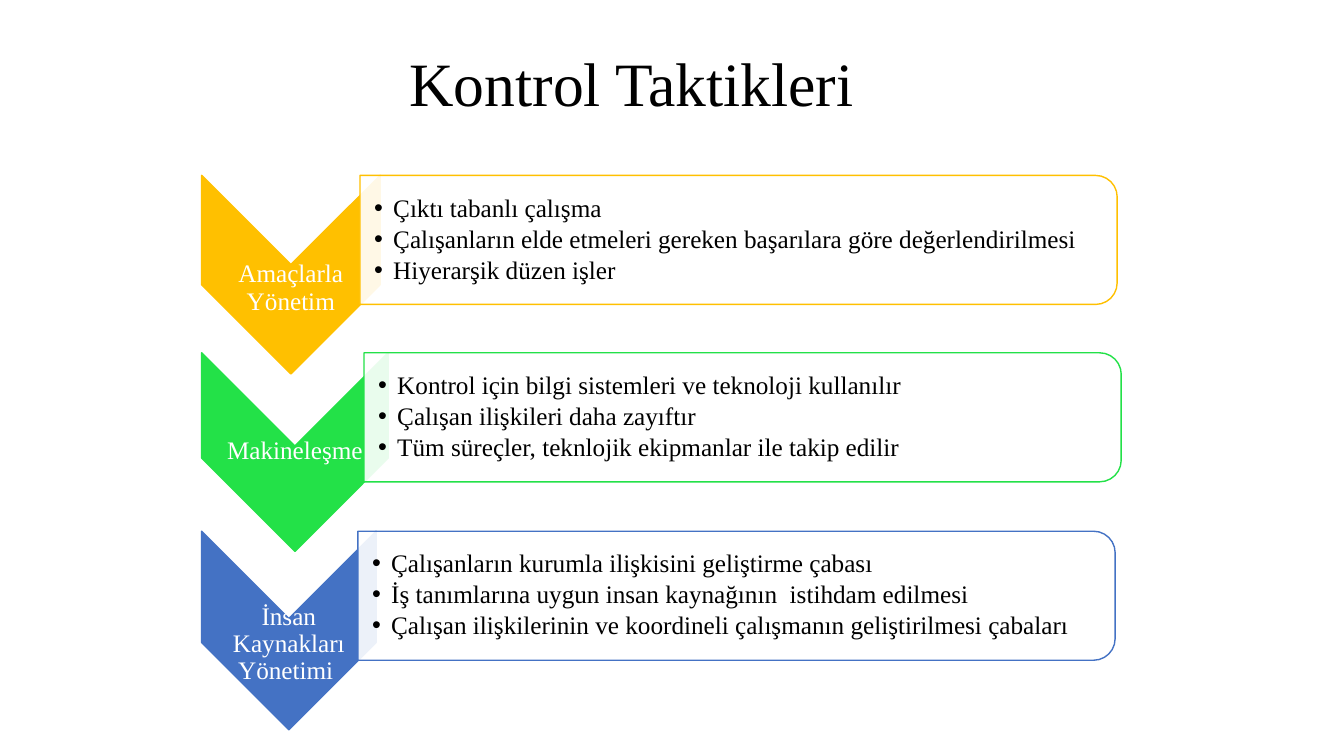
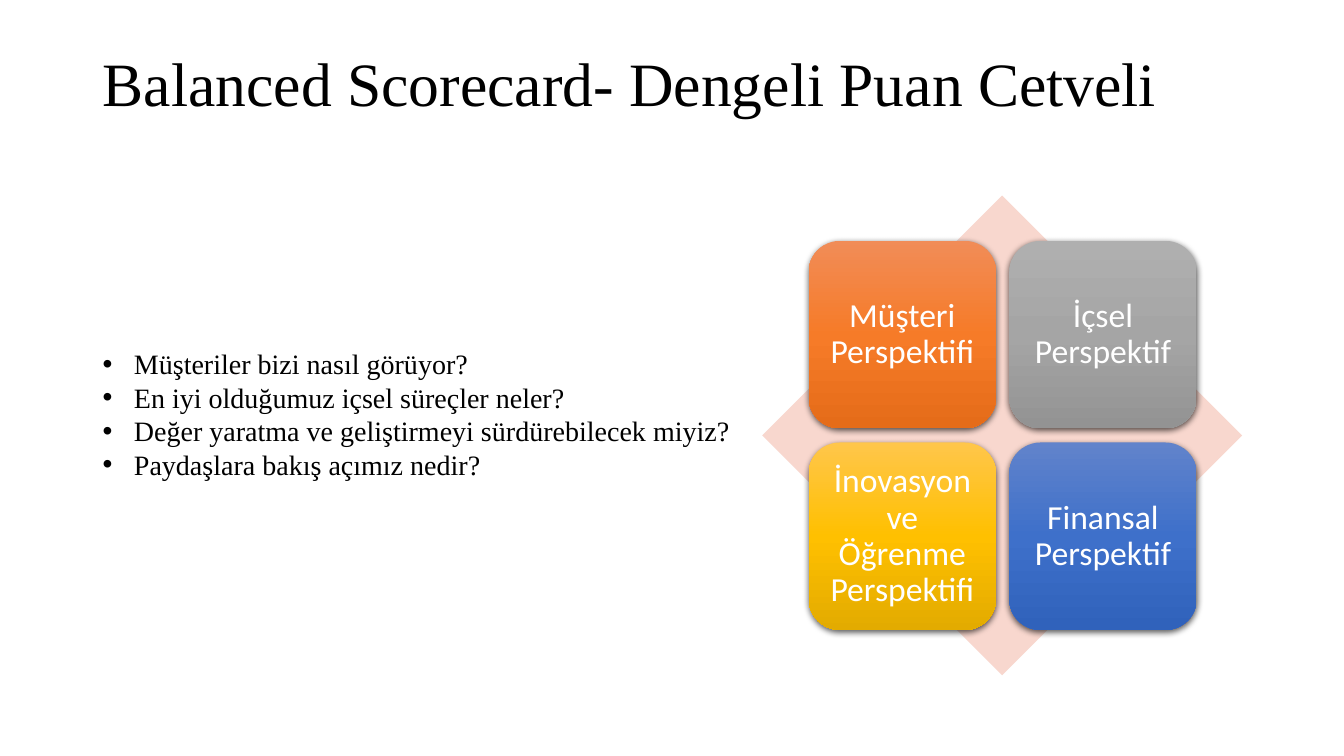
from copy import deepcopy
from dataclasses import dataclass

from lxml import etree
from pptx import Presentation
from pptx import util as u
from pptx.dml.color import RGBColor
from pptx.enum import shapes, text
from pptx.oxml import ns

PX = 9144
KIND = shapes.MSO_SHAPE
LEFT, MID = text.PP_ALIGN.LEFT, text.PP_ALIGN.CENTER


@dataclass(frozen=True)
class Theme:
    serif: str = "Times New Roman"
    sans: str = "Calibri"
    ink: str = "000000"
    white: str = "FFFFFF"
    gold: str = "FFC000"
    green: str = "23E148"
    blue: str = "4472C4"
    blush: str = "F8D7CE"
    fire: tuple = ("F18C57", "F67B28", "E56C19")
    grey: tuple = ("AFAFAF", "A5A5A5", "939393")
    amber: tuple = ("FFC64B", "FFC000", "E3AB00")
    navy: tuple = ("6183CB", "3E70CA", "3062BB")
    head: int = 44
    tile: int = 24
    body: int = 20
    small: int = 18
    tight: float = 0.9


def px(n):
    return u.Emu(round(n * PX))


def rgb(code):
    return RGBColor.from_string(code)


def sub(node, tag, **attrs):
    return etree.SubElement(node, ns.qn("a:" + tag), attrs)


class Deck:
    """Holds the style and the current slide, and draws each kind of element."""

    def __init__(self, theme):
        self.t = theme
        self.prs = Presentation()
        self.prs.slide_width, self.prs.slide_height = u.Inches(13.33), u.Inches(7.5)

    def page(self, title, x, y, w, h):
        self.slide = self.prs.slides.add_slide(self.prs.slide_layouts[5])
        box = self.slide.shapes.title
        box.left, box.top, box.width, box.height = map(px, (x, y, w, h))
        self.words(box, [title], self.t.head, line=self.t.tight)

    def words(self, box, lines, size, font=None, ink=None, align=LEFT, line=1.0,
              after=0, hang=0, pad=None, anchor=text.MSO_ANCHOR.MIDDLE):
        frame = box.text_frame
        frame.word_wrap = True
        frame.auto_size = text.MSO_AUTO_SIZE.NONE
        frame.vertical_anchor = anchor
        if pad:
            (frame.margin_left, frame.margin_top,
             frame.margin_right, frame.margin_bottom) = map(px, pad)
        for i, phrase in enumerate(lines):
            para = frame.add_paragraph() if i else frame.paragraphs[0]
            para.alignment = align
            para.line_spacing = line
            para.space_before, para.space_after = u.Pt(0), u.Pt(after)
            run = para.add_run()
            run.text = phrase
            run.font.size = u.Pt(size)
            run.font.name = font or self.t.serif
            run.font.color.rgb = rgb(ink or self.t.ink)
            if hang:
                self.dot(para, hang)

    def dot(self, para, hang):
        prop = para._p.get_or_add_pPr()
        prop.set("marL", str(px(hang)))
        prop.set("indent", str(-px(hang)))
        sub(prop, "buFont", typeface="Arial")
        sub(prop, "buChar", char="•")

    def note(self, x, y, w, h, lines, size, **style):
        box = self.slide.shapes.add_textbox(*map(px, (x, y, w, h)))
        self.words(box, lines, size, **style)

    def shape(self, kind, x, y, w, h, fill, edge=None, turn=False):
        if turn:
            x, y, w, h = x + (w - h) / 2, y + (h - w) / 2, h, w
        item = self.slide.shapes.add_shape(kind, *map(px, (x, y, w, h)))
        item.shadow.inherit = False
        item.rotation = 90 if turn else 0
        if isinstance(fill, tuple):
            self.blend(item, fill)
        else:
            item.fill.solid()
            item.fill.fore_color.rgb = rgb(fill)
        if edge:
            item.line.color.rgb = rgb(edge)
            item.line.width = u.Pt(1)
        else:
            item.line.fill.background()
        return item

    def blend(self, item, tones):
        item.fill.gradient()
        item.fill.gradient_angle = 270
        stops = item._element.spPr.find(".//" + ns.qn("a:gsLst"))
        stops.append(deepcopy(stops[0]))
        for i, (stop, tone) in enumerate(zip(item.fill.gradient_stops, tones)):
            stop.position = i / 2
            stop.color.rgb = rgb(tone)

    def shade(self, item):
        glow = sub(item._element.spPr.find(ns.qn("a:effectLst")), "outerShdw",
                   blurRad=str(u.Pt(4.5)), dist=str(u.Pt(1.5)), dir="5400000",
                   algn="ctr", rotWithShape="0")
        sub(sub(glow, "srgbClr", val=self.t.ink), "alpha", val="63000")

    def row(self, y, wide, x, mid, tone, label, lines):
        t = self.t
        self.shape(KIND.CHEVRON, 200, y, wide, 197, tone, tone, turn=True)
        self.note(200, y + mid - 40, wide, 80, [label], t.small, ink=t.white,
                  align=MID, line=t.tight, pad=(1, 1, 1, 1))
        panel = self.shape(KIND.ROUND_2_SAME_RECTANGLE, x, y, 751, 128,
                           t.white, tone, turn=True)
        tint = panel._element.spPr.find(ns.qn("a:solidFill"))[0]
        sub(tint, "alpha", val="90000")
        self.note(x, y + 6, 744, 116, lines, t.small, line=t.tight,
                  after=2.7, hang=19, pad=(14, 1, 1, 1))

    def tile(self, x, y, tones, label):
        t = self.t
        item = self.shape(KIND.ROUNDED_RECTANGLE, x, y, 186, 186, tones)
        self.shade(item)
        self.words(item, [label], t.tile, font=t.sans, ink=t.white, align=MID,
                   line=t.tight, pad=(10, 10, 10, 10))


def main():
    t = Theme()
    deck = Deck(t)

    deck.page("Kontrol Taktikleri", 396, 35, 477, 101)
    rows = [
        (177, 357, 112, t.gold, "Amaçlarla Yönetim",
         ["Çıktı tabanlı çalışma",
          "Çalışanların elde etmeleri gereken başarılara göre değerlendirilmesi",
          "Hiyerarşik düzen işler"]),
        (185, 361, 98, t.green, "Makineleşme",
         ["Kontrol için bilgi sistemleri ve teknoloji kullanılır",
          "Çalışan ilişkileri daha zayıftır",
          "Tüm süreçler, teknlojik ekipmanlar ile takip edilir"]),
        (173, 355, 112, t.blue, "İnsan Kaynakları Yönetimi ",
         ["Çalışanların kurumla ilişkisini geliştirme çabası",
          "İş tanımlarına uygun insan kaynağının  istihdam edilmesi",
          "Çalışan ilişkilerinin ve koordineli çalışmanın geliştirilmesi çabaları"]),
    ]
    for i, row in enumerate(rows):
        deck.row(174 + 353 * i // 2, *row)

    deck.page("Balanced Scorecard- Dengeli Puan Cetveli", 92, 35, 1150, 102)
    deck.shape(KIND.DIAMOND, 756, 194, 476, 476, t.blush)
    tiles = [
        (t.fire, "Müşteri Perspektifi"),
        (t.grey, "İçsel Perspektif"),
        (t.amber, "İnovasyon ve Öğrenme Perspektifi"),
        (t.navy, "Finansal Perspektif"),
    ]
    for i, (tones, label) in enumerate(tiles):
        deck.tile(802 + i % 2 * 199, 239 + i // 2 * 200, tones, label)
    deck.note(92, 339, 642, 145,
              ["Müşteriler bizi nasıl görüyor?",
               "En iyi olduğumuz içsel süreçler neler?",
               "Değer yaratma ve geliştirmeyi sürdürebilecek miyiz?",
               "Paydaşlara bakış açımız nedir?"],
              t.body, hang=31, anchor=text.MSO_ANCHOR.TOP)

    deck.prs.save("out.pptx")


if __name__ == "__main__":
    main()
